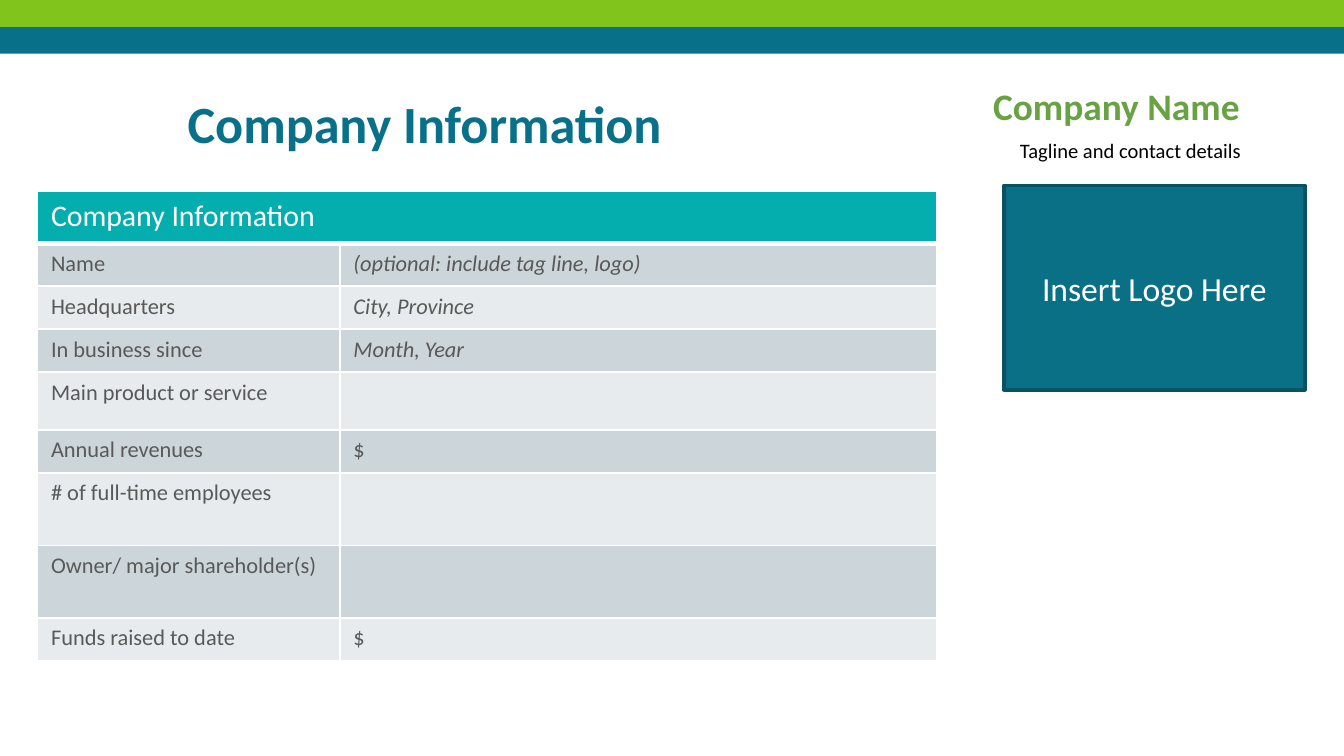
from dataclasses import dataclass, field

from lxml import etree
from pptx import Presentation
from pptx import util as u
from pptx.dml.color import RGBColor
from pptx.enum import shapes, text
from pptx.oxml.ns import qn

PX = 4572  # 200 px to the inch
FONT = "Calibri"
TEAL, GREEN, WHITE, GREY = "09708A", "80C41C", "FFFFFF", "595959"
BANDS = ("CCD5D9", "E7EBED")
LEFT, CENTER, RIGHT = (text.PP_ALIGN.LEFT, text.PP_ALIGN.CENTER,
                       text.PP_ALIGN.RIGHT)


@dataclass
class Box:
    x: int
    y: int
    w: int
    h: int


@dataclass
class Label:
    words: str
    color: str
    size: int
    bold: bool = False
    italic: bool = False
    para: dict = field(default_factory=dict)


@dataclass
class TextItem:
    box: Box
    label: Label
    frame: dict


@dataclass
class Row:
    name: str
    value: str = ""
    height: int = 64
    hint: bool = False


BARS = [(Box(0, 40, 2000, 40), TEAL), (Box(0, 0, 2000, 40), GREEN)]

TEXTS = [
    TextItem(Box(22, 116, 982, 114),
             Label("Company Information", TEAL, 28, bold=True,
                   para={"alignment": RIGHT}),
             {"word_wrap": True, "margin_top": px_inset, "margin_bottom": px_inset}
             if (px_inset := 20 * PX) else {}),
    TextItem(Box(1458, 114, 410, 88),
             Label("Company Name", "68A242", 20, bold=True),
             {"word_wrap": False}),
    TextItem(Box(1498, 200, 480, 54),
             Label("Tagline and contact details", "000000", 11,
                   para={"line_spacing": 0.9, "space_after": u.Pt(12)}),
             {"word_wrap": True}),
]
TEXTS[0].frame = {"word_wrap": True, "margin_top": 20 * PX,
                  "margin_bottom": 20 * PX}

LOGO = Box(1494, 276, 448, 304)
TABLE = Box(56, 284, 1338, 700)
COLUMNS = (450, 888)
HEADER_HEIGHT = 78
ROWS = [
    Row("Name", "(optional: include tag line, logo)", hint=True),
    Row("Headquarters", "City, Province", hint=True),
    Row("In business since", "Month, Year", hint=True),
    Row("Main product or service", height=86),
    Row("Annual revenues", "$"),
    Row("# of full-time employees", height=108),
    Row("Owner/ major shareholder(s)", height=108),
    Row("Funds raised to date", "$"),
]


def emu(box: Box) -> list[int]:
    return [n * PX for n in (box.x, box.y, box.w, box.h)]


def rgb(value: str) -> RGBColor:
    return RGBColor.from_string(value)


def apply(target, values: dict) -> None:
    for name, value in values.items():
        setattr(target, name, value)


def write(tf, label: Label) -> None:
    p = tf.paragraphs[0]
    apply(p, {"alignment": LEFT, **label.para})
    font = p.font
    if label.words:
        r = p.add_run()
        r.text = label.words
        font = r.font
    apply(font, {"name": FONT, "size": u.Pt(label.size),
                 "bold": label.bold, "italic": label.italic})
    font.color.rgb = rgb(label.color)


def add_rect(slide, box: Box, fill: str):
    sp = slide.shapes.add_shape(shapes.MSO_SHAPE.RECTANGLE, *emu(box))
    sp.shadow.inherit = False
    sp.fill.solid()
    sp.fill.fore_color.rgb = rgb(fill)
    sp.line.fill.background()
    return sp


def add_text(slide, item: TextItem) -> None:
    tf = slide.shapes.add_textbox(*emu(item.box)).text_frame
    apply(tf, item.frame)
    write(tf, item.label)


def add_logo_box(slide) -> None:
    sp = add_rect(slide, LOGO, "097086")
    sp.line.color.rgb = rgb("075363")
    sp.line.width = u.Pt(2)
    sp.text_frame.vertical_anchor = text.MSO_ANCHOR.MIDDLE
    write(sp.text_frame, Label("Insert Logo Here", WHITE, 18,
                               para={"alignment": CENTER}))


def style_cell(cell, fill: str, bottom: int = 1) -> None:
    """Fill the cell and give it white borders, widths in points."""
    tc_pr = cell._tc.get_or_add_tcPr()
    for side, width in (("L", 1), ("R", 1), ("T", 1), ("B", bottom)):
        ln = etree.SubElement(tc_pr, qn(f"a:ln{side}"), w=str(u.Pt(width)))
        solid = etree.SubElement(ln, qn("a:solidFill"))
        etree.SubElement(solid, qn("a:srgbClr"), val=WHITE)
    cell.fill.solid()
    cell.fill.fore_color.rgb = rgb(fill)


def add_company_table(slide) -> None:
    table = slide.shapes.add_table(len(ROWS) + 1, len(COLUMNS),
                                   *emu(TABLE)).table
    for column, width in zip(table.columns, COLUMNS):
        column.width = width * PX
    heights = [HEADER_HEIGHT] + [row.height for row in ROWS]
    for table_row, height in zip(table.rows, heights):
        table_row.height = height * PX

    header = table.cell(0, 0)
    header.merge(table.cell(0, 1))
    for col in range(len(COLUMNS)):
        style_cell(table.cell(0, col), "05AEAE", bottom=3)
    write(header.text_frame, Label("Company Information", WHITE, 16))

    for i, row in enumerate(ROWS):
        labels = (Label(row.name, GREY, 12),
                  Label(row.value, GREY, 12, italic=row.hint))
        for col, label in enumerate(labels):
            cell = table.cell(i + 1, col)
            style_cell(cell, BANDS[i % 2])
            write(cell.text_frame, label)


def main() -> None:
    prs = Presentation()
    apply(prs, {"slide_width": 2000 * PX, "slide_height": 1125 * PX})
    s = prs.slides.add_slide(prs.slide_layouts[6])
    for box, fill in BARS:
        add_rect(s, box, fill)
    add_company_table(s)
    for item in TEXTS:
        add_text(s, item)
    add_logo_box(s)
    prs.save("out.pptx")


if __name__ == "__main__":
    main()
